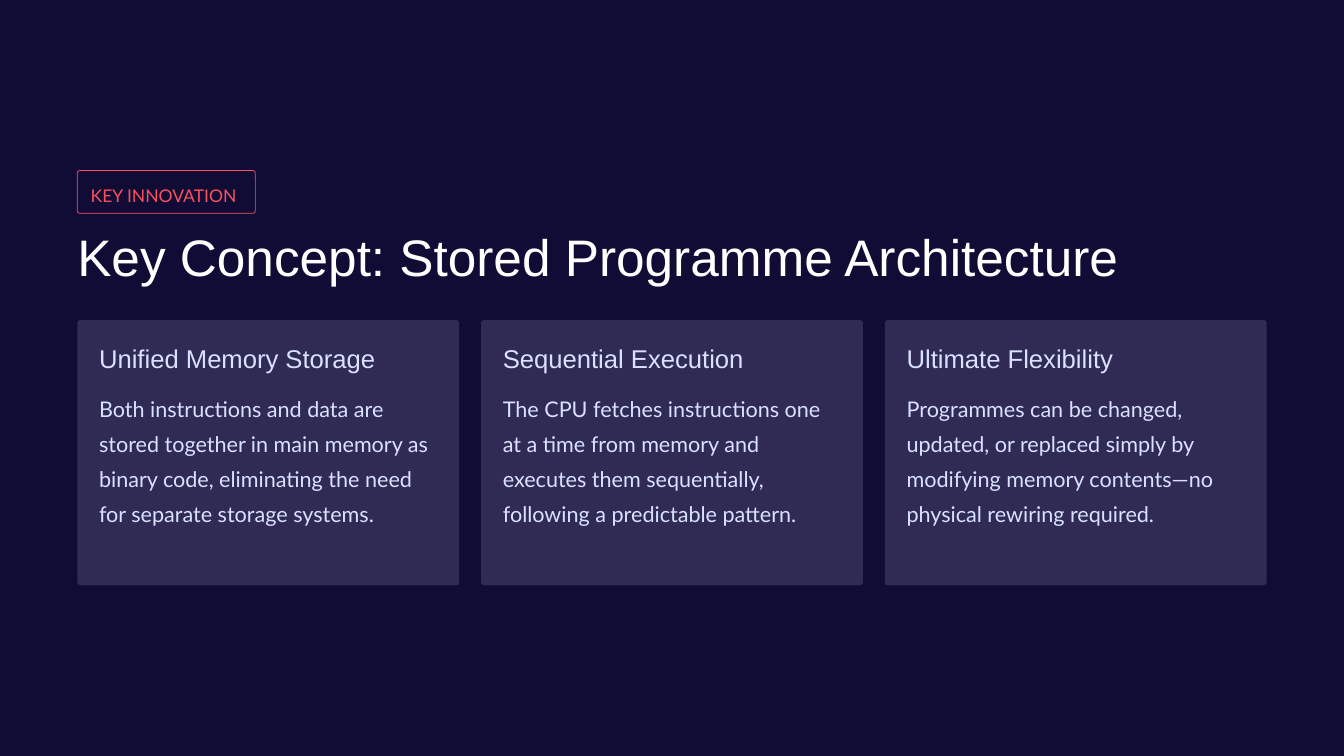
"""Build the stored programme architecture slide: a tag, a title and three cards."""
from pptx import Presentation
from pptx import util as u
from pptx.dml import color
from pptx.enum import shapes, text

TAG = "KEY INNOVATION"
TITLE = "Key Concept: Stored Programme Architecture"
CARDS = [
    ("Unified Memory Storage",
     "Both instructions and data are stored together in main memory as binary code, "
     "eliminating the need for separate storage systems."),
    ("Sequential Execution",
     "The CPU fetches instructions one at a time from memory and executes them "
     "sequentially, following a predictable pattern."),
    ("Ultimate Flexibility",
     "Programmes can be changed, updated, or replaced simply by modifying memory "
     "contents—no physical rewiring required."),
]
NIGHT, PANEL, CORAL, PALE, WHITE = "100C35", "2F2B54", "FD505F", "D9E1FF", "FFFFFF"
WIDTH, HEIGHT = 16, 9
MARGIN, GAP, PAD = 0.92, 0.26, 0.26
CONTENT_WIDTH = WIDTH - 2 * MARGIN
CARD_TOP, CARD_HEIGHT = 3.81, 3.16
CARD_WIDTH = (CONTENT_WIDTH - GAP * (len(CARDS) - 1)) / len(CARDS)


def rgb(code):
    return color.RGBColor.from_string(code)


def panel(page, left, top, width, height, corner, fill=None, line=None):
    """Draw a rounded rectangle with an optional fill and outline."""
    box = page.shapes.add_shape(shapes.MSO_SHAPE.ROUNDED_RECTANGLE,
                                *map(u.Inches, (left, top, width, height)))
    box.shadow.inherit = False
    box.adjustments[0] = corner
    if fill:
        box.fill.solid()
        box.fill.fore_color.rgb = rgb(fill)
    else:
        box.fill.background()
    if line:
        box.line.color.rgb = rgb(line)
        box.line.width = u.Pt(0.6)
    else:
        box.line.fill.background()


def write(box, words, size, leading, font, ink, wrap=False):
    """Fill a text shape with one left-aligned run and no insets."""
    frame = box.text_frame
    frame.margin_left = frame.margin_right = frame.margin_top = frame.margin_bottom = 0
    frame.word_wrap = wrap
    frame.auto_size = text.MSO_AUTO_SIZE.NONE
    frame.vertical_anchor = text.MSO_ANCHOR.TOP
    para = frame.paragraphs[0]
    para.alignment = text.PP_ALIGN.LEFT
    para.line_spacing = u.Pt(leading)
    para.space_before = u.Pt(0)
    span = para.add_run()
    span.text = words
    span.font.size = u.Pt(size)
    span.font.name = font
    span.font.color.rgb = rgb(ink)


def label(page, left, top, width, height, *style, wrap=False):
    """Add a text box and write into it."""
    box = page.shapes.add_textbox(*map(u.Inches, (left, top, width, height)))
    write(box, *style, wrap=wrap)


def main():
    """Build and save the deck."""
    deck = Presentation()
    deck.slide_width, deck.slide_height = u.Inches(WIDTH), u.Inches(HEIGHT)
    page = deck.slides.add_slide(deck.slide_layouts[5])
    page.background.fill.solid()
    page.background.fill.fore_color.rgb = rgb(NIGHT)

    panel(page, MARGIN, 2.03, 2.12, 0.51, 0.062, line=CORAL)
    label(page, MARGIN + 0.16, 2.12, 1.78, 0.33, TAG, 15, 24, "Lato", CORAL)

    title = page.shapes.title
    title.left, title.top = u.Inches(MARGIN), u.Inches(2.65)
    title.width, title.height = u.Inches(CONTENT_WIDTH), u.Inches(0.77)
    write(title, TITLE, 44, 55, "Arial", WHITE, wrap=True)

    for column, (heading, body) in enumerate(CARDS):
        left = MARGIN + column * (CARD_WIDTH + GAP)
        inner = CARD_WIDTH - 2 * PAD
        panel(page, left, CARD_TOP, CARD_WIDTH, CARD_HEIGHT, 0.012, fill=PANEL)
        label(page, left + PAD, CARD_TOP + PAD, inner, 0.38,
              heading, 22, 27.5, "Arial", PALE)
        label(page, left + PAD, CARD_TOP + 0.8, inner, 2.09,
              body, 18.5, 30, "Lato", PALE, wrap=True)

    deck.save("out.pptx")


if __name__ == "__main__":
    main()
